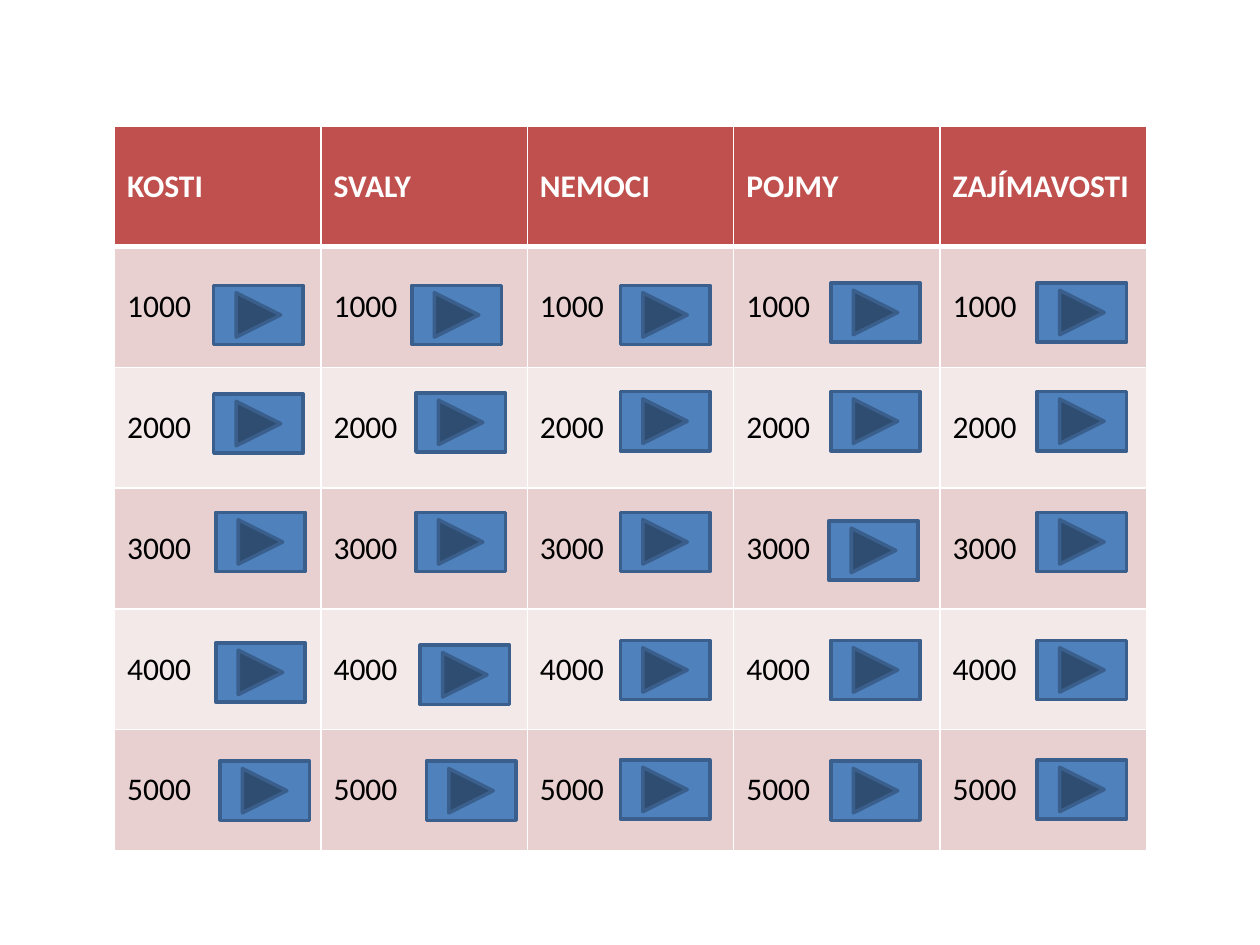
"""Quiz board: five topics by five point values, each with a forward button."""
from lxml.etree import SubElement
from pptx import Presentation
from pptx.dml.color import RGBColor
from pptx.enum.shapes import MSO_SHAPE as SHAPE
from pptx.enum.text import MSO_ANCHOR as ANCHOR
from pptx.oxml.ns import qn
from pptx.util import Inches, Pt


def rgb(value):
    return RGBColor.from_string(value)


def add_borders(cell, top, bottom):
    tcPr = cell._tc.get_or_add_tcPr()
    widths = {"a:lnL": 1, "a:lnR": 1, "a:lnT": top, "a:lnB": bottom}
    for i, (tag, width) in enumerate(widths.items()):
        ln = SubElement(tcPr, qn(tag), w=str(Pt(width)))
        fill = SubElement(ln, qn("a:solidFill"))
        SubElement(fill, qn("a:srgbClr"), val="FFFFFF")
        tcPr.insert(i, ln)


TOPICS = ["KOSTI", "SVALY", "NEMOCI", "POJMY", "ZAJÍMAVOSTI"]
POINTS = ["1000", "2000", "3000", "4000", "5000"]
ROWS = [TOPICS] + [[points] * len(TOPICS) for points in POINTS]
BANDS = ["F4E9E9", "E8D0D0"]

BUTTON_X = [
    [0.48, 0.48, 0.49, 0.49, 0.51],
    [0.44, 0.46, 0.46, 0.48, 0.51],
    [0.45] * 5,
    [0.47, 0.47, 0.46, 0.47, 0.47],
    [0.47] * 5,
]
BUTTON_Y = [
    [0.32, 0.22, 0.20, 0.28, 0.26],
    [0.32, 0.21, 0.20, 0.30, 0.26],
    [0.32, 0.20, 0.20, 0.26, 0.25],
    [0.30, 0.20, 0.27, 0.26, 0.26],
    [0.30, 0.20, 0.20, 0.26, 0.25],
]

prs = Presentation()
prs.slide_width, prs.slide_height = Inches(10), Inches(7.5)
s = prs.slides.add_slide(prs.slide_layouts[6])

left, top = Inches(0.91), Inches(1)
col_w = Inches(8.19) // len(TOPICS)
row_h = Inches(5.75) // len(ROWS)

table = s.shapes.add_table(
    len(ROWS), len(TOPICS), left, top, col_w * len(TOPICS), row_h * len(ROWS)
).table
for row, texts in enumerate(ROWS):
    header = row == 0
    for col, text in enumerate(texts):
        cell = table.cell(row, col)
        cell.vertical_anchor = ANCHOR.MIDDLE
        cell.fill.solid()
        cell.fill.fore_color.rgb = rgb("C0504D" if header else BANDS[row % 2])
        add_borders(cell, 3 if row == 1 else 1, 3 if header else 1)
        r = cell.text_frame.paragraphs[0].add_run()
        r.text = text
        r.font.name, r.font.size, r.font.bold = "Calibri", Pt(18), header
        r.font.color.rgb = rgb("FFFFFF" if header else "000000")

for col, (xs, ys) in enumerate(zip(BUTTON_X, BUTTON_Y)):
    for row, (x, y) in enumerate(zip(xs, ys), 1):
        sp = s.shapes.add_shape(
            SHAPE.ACTION_BUTTON_FORWARD_OR_NEXT,
            left + int((col + x) * col_w), top + int((row + y) * row_h),
            Inches(0.71), Inches(0.47),
        )
        sp.shadow.inherit = False
        sp.fill.solid()
        sp.fill.fore_color.rgb = rgb("4F81BD")
        sp.line.color.rgb = rgb("3A5F8C")
        sp.line.width = Pt(2)

prs.save("out.pptx")
